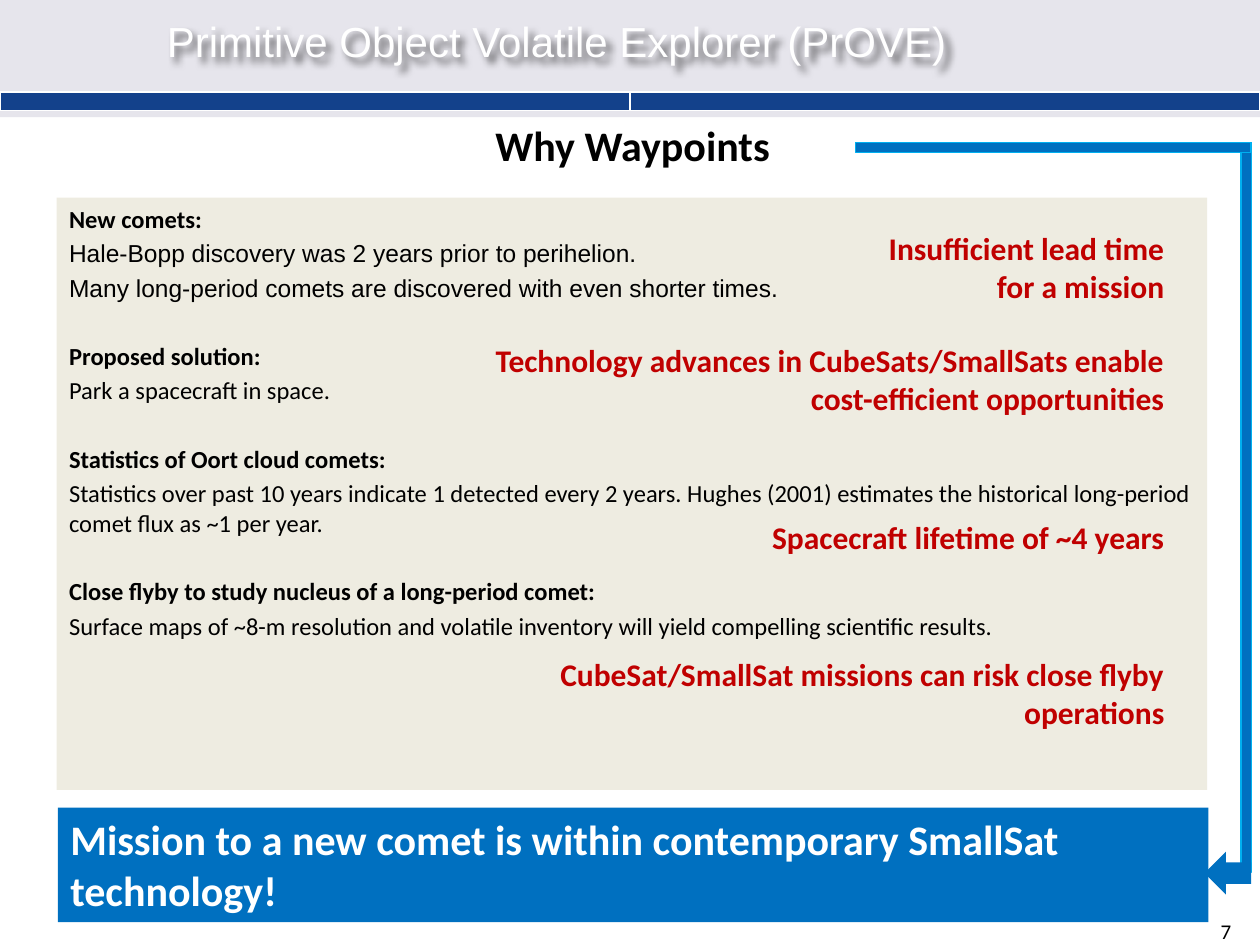
"""Build the Why Waypoints slide."""
import pptx
import pptx.util
import pptx.dml.color
import pptx.enum.shapes
import pptx.enum.text
import pptx.oxml
import pptx.oxml.ns

Pt = pptx.util.Pt
SHAPE = pptx.enum.shapes.MSO_SHAPE
ALIGN = pptx.enum.text.PP_ALIGN
ANCHOR = pptx.enum.text.MSO_ANCHOR
A_NS = pptx.oxml.ns.nsdecls("a")

GRAY, NAVY, BEIGE, BLUE, CYAN = "E6E5EC", "13418B", "EEECE1", "0070C0", "00B0F0"
RED, BLACK, WHITE = "C00000", "000000", "FFFFFF"
LINE_GAP, SECTION_GAP = 2.8, 22.4

HEADER = "Primitive Object Volatile Explorer (PrOVE)"
TITLE = "Why Waypoints"
PAGE = "7"
SECTIONS = [
    ("New comets:", "Arial", [
        "Hale-Bopp discovery was 2 years prior to perihelion.",
        "Many long-period comets are discovered with even shorter times."]),
    ("Proposed solution:", "Calibri", ["Park a spacecraft in space."]),
    ("Statistics of Oort cloud comets:", "Calibri", [
        "Statistics over past 10 years indicate 1 detected every 2 years. Hughes (2001) "
        "estimates the historical long-period comet flux as ~1 per year."]),
    ("Close flyby to study nucleus of a long-period comet:", "Calibri", [
        "Surface maps of ~8-m resolution and volatile inventory will yield compelling "
        "scientific results."]),
]
CALLOUT_RIGHT = 672.5
CALLOUTS = [
    ("Insufficient lead time for a mission", 127.4, 172.8, 51),
    ("Technology advances in CubeSats/SmallSats enable cost-efficient opportunities",
     191.5, 408.2, 51),
    ("Spacecraft lifetime of ~4 years", 292.3, 287.3, 29),
    ("CubeSat/SmallSat missions can risk close flyby operations", 370.8, 386.6, 51),
]
CONCLUSION = "Mission to a new comet is within contemporary SmallSat technology!"
CONNECTOR = [
    (SHAPE.RECTANGLE, (709.2, 81.4, 5.8, 416.9), CYAN),
    (SHAPE.RECTANGLE, (488.9, 81.4, 226.1, 5.8), CYAN),
    (SHAPE.LEFT_ARROW, (688.3, 486.7, 26.7, 24.5), None),
]


def rgb(value):
    return pptx.dml.color.RGBColor.from_string(value)


def add_block(shapes, kind, box, fill, line=None):
    sp = shapes.add_shape(kind, *map(Pt, box))
    sp.shadow.inherit = False
    sp.fill.solid()
    sp.fill.fore_color.rgb = rgb(fill)
    if line:
        sp.line.color.rgb = rgb(line)
        sp.line.width = Pt(0.75)
    else:
        sp.line.fill.background()
    return sp


def write(sp, text, size=14, font="Calibri", color=BLACK, bold=False,
          align=ALIGN.LEFT, anchor=ANCHOR.TOP, before=0):
    tf = sp.text_frame
    tf.word_wrap = True
    tf.auto_size = pptx.enum.text.MSO_AUTO_SIZE.NONE
    tf.vertical_anchor = anchor
    p = tf.add_paragraph() if tf.text else tf.paragraphs[0]
    p.alignment = align
    p.space_before = Pt(before)
    r = p.add_run()
    r.text = text
    r.font.size, r.font.name, r.font.bold = Pt(size), font, bold
    r.font.color.rgb = rgb(color)


def add_text(shapes, box, text, **fmt):
    sp = shapes.add_textbox(*map(Pt, box))
    write(sp, text, **fmt)
    return sp


def add_header(shapes):
    add_block(shapes, SHAPE.RECTANGLE, (0, 0, 720, 67), GRAY)
    table = shapes.add_table(1, 2, Pt(0), Pt(52.6), Pt(720), Pt(10.5)).table
    for cell in table.iter_cells():
        cell.fill.solid()
        cell.fill.fore_color.rgb = rgb(NAVY)
        cell.margin_top = cell.margin_bottom = 0
        cell.text_frame.paragraphs[0]._p.append(
            pptx.oxml.parse_xml(f'<a:endParaRPr {A_NS} sz="400"/>'))
    sp = add_text(shapes, (77, -1.4, 470.9, 49.7), HEADER, size=24, font="Arial",
                  color=WHITE, align=ALIGN.RIGHT, anchor=ANCHOR.MIDDLE)
    sp._element.spPr.append(pptx.oxml.parse_xml(
        f'<a:effectLst {A_NS}><a:outerShdw blurRad="50800" dist="50800" dir="2700000">'
        '<a:srgbClr val="000000"><a:alpha val="60000"/></a:srgbClr>'
        '</a:outerShdw></a:effectLst>'))


def main():
    prs = pptx.Presentation()
    prs.slide_width, prs.slide_height = Pt(720), Pt(540)
    slide = prs.slides.add_slide(prs.slide_layouts[5])
    shapes = slide.shapes

    title = shapes.title
    title.left, title.top, title.width, title.height = map(Pt, (14.4, 64.8, 694.1, 36))
    write(title, TITLE, size=24, bold=True, align=ALIGN.CENTER)
    add_header(shapes)
    add_text(shapes, (690.5, 521.3, 31, 21.6), PAGE, size=12)

    body = add_block(shapes, SHAPE.RECTANGLE, (32.4, 113, 657.4, 338.4), BEIGE)
    for i, (heading, font, lines) in enumerate(SECTIONS):
        write(body, heading, bold=True, before=SECTION_GAP if i else 0)
        for line in lines:
            write(body, line, font=font, before=LINE_GAP)

    for text, top, width, height in CALLOUTS:
        add_text(shapes, (CALLOUT_RIGHT - width, top, width, height), text,
                 size=18, color=RED, bold=True, align=ALIGN.RIGHT)

    banner = add_block(shapes, SHAPE.RECTANGLE, (33.1, 461.5, 657.4, 65.5), BLUE)
    write(banner, CONCLUSION, size=24, color=WHITE, bold=True)

    group = shapes.add_group_shape()
    for kind, box, line in CONNECTOR:
        add_block(group.shapes, kind, box, BLUE, line)

    prs.save("out.pptx")


if __name__ == "__main__":
    main()
